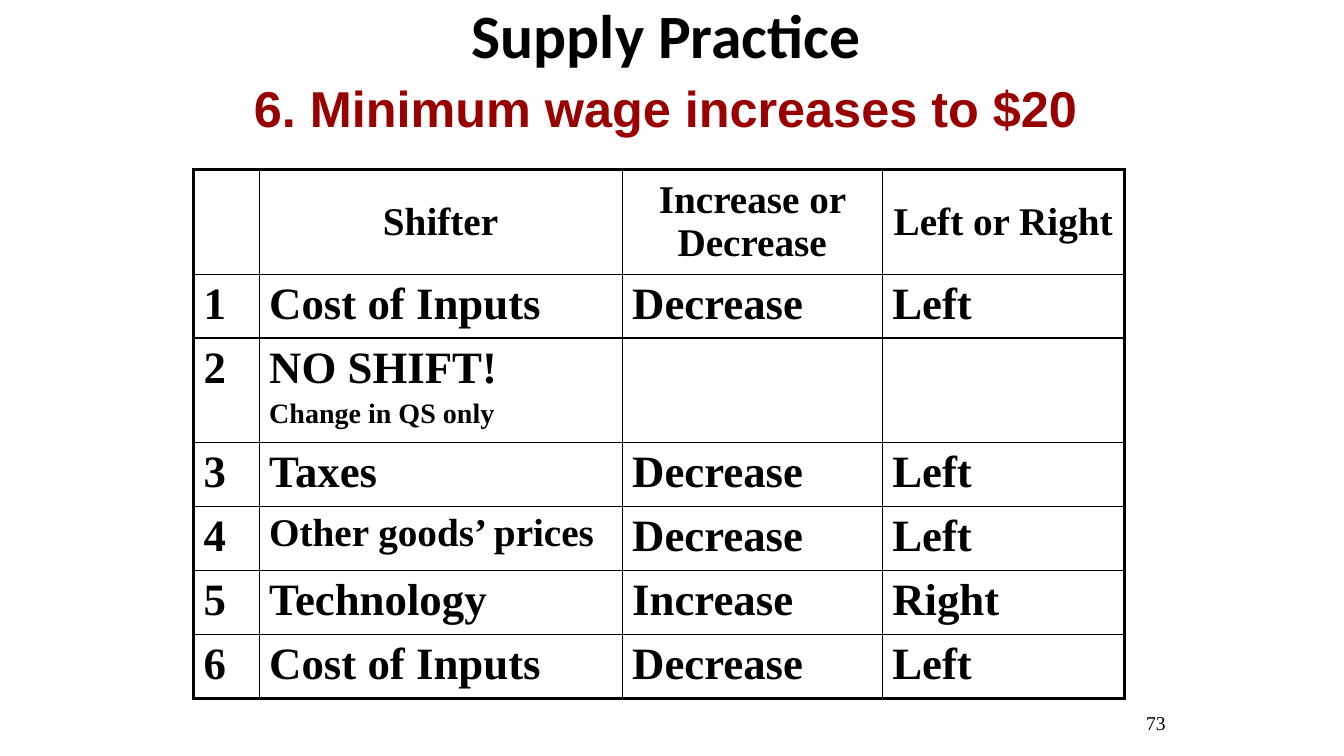
import pptx
import pptx.dml.color
import pptx.enum.text
import pptx.oxml
import pptx.oxml.ns
import pptx.util

Inches = pptx.util.Inches
Pt = pptx.util.Pt
ALIGN = pptx.enum.text.PP_ALIGN
ANCHOR = pptx.enum.text.MSO_ANCHOR
AUTO_SIZE = pptx.enum.text.MSO_AUTO_SIZE

COLORS = {"ink": "000000", "question": "990000", "paper": "FFFFFF"}
SERIF = "Times New Roman"
HEADINGS = ["", "Shifter", "Increase or Decrease", "Left or Right"]
ANSWERS = [
    ["1", "Cost of Inputs", "Decrease", "Left"],
    ["2", "NO SHIFT!\nChange in QS only", "", ""],
    ["3", "Taxes", "Decrease", "Left"],
    ["4", "Other goods’ prices", "Decrease", "Left"],
    ["5", "Technology", "Increase", "Right"],
    ["6", "Cost of Inputs", "Decrease", "Left"],
]
TEXT_SIZES = {"Change in QS only": 20, "Other goods’ prices": 28}
COLUMN_WIDTHS = [0.65, 3.6, 2.58, 2.4]
ROW_HEIGHTS = [1.04, 0.63, 1.04, 0.63, 0.63, 0.63, 0.63]


class PracticeSlide:
    def __init__(self, presentation):
        self.slide = presentation.slides.add_slide(presentation.slide_layouts[5])
        background = self.slide.background.fill
        background.solid()
        background.fore_color.rgb = self.color("paper")

    def color(self, key):
        return pptx.dml.color.RGBColor.from_string(COLORS[key])

    def apply(self, target, values):
        for attribute, value in values.items():
            setattr(target, attribute, value)

    def add_words(self, paragraph, text, font, size, color="ink", bold=True, **layout):
        run = paragraph.add_run()
        run.text = text
        self.apply(run.font, {"name": font, "size": Pt(size), "bold": bold})
        run.font.color.rgb = self.color(color)
        self.apply(paragraph, layout)

    def title(self, text, left, top, width, height):
        heading = self.slide.shapes.title
        self.apply(heading, {
            "left": Inches(left), "top": Inches(top),
            "width": Inches(width), "height": Inches(height),
        })
        margins = ["margin_left", "margin_top", "margin_right", "margin_bottom"]
        self.apply(heading.text_frame, {
            **dict.fromkeys(margins, Inches(0.05)),
            "vertical_anchor": ANCHOR.MIDDLE,
            "word_wrap": True,
            "auto_size": AUTO_SIZE.NONE,
        })
        self.add_words(heading.text_frame.paragraphs[0], text, "Calibri", 44,
                       alignment=ALIGN.LEFT, line_spacing=0.9)

    def text(self, text, left, top, width, height, font, size, indent=0, **style):
        box = self.slide.shapes.add_textbox(
            Inches(left), Inches(top), Inches(width), Inches(height))
        box.text_frame.word_wrap = True
        paragraph = box.text_frame.paragraphs[0]
        if indent:
            properties = paragraph._p.get_or_add_pPr()
            properties.set("marL", "0")
            properties.set("indent", str(Inches(indent)))
        self.add_words(paragraph, text, font, size, **style)

    def border(self, cell, outer_sides):
        properties = cell._tc.get_or_add_tcPr()
        for side in "LRTB":
            width = Pt(2.25 if side in outer_sides else 1)
            properties.append(pptx.oxml.parse_xml(
                f'<a:ln{side} {pptx.oxml.ns.nsdecls("a")} w="{width}">'
                f'<a:solidFill><a:srgbClr val="{COLORS["ink"]}"/></a:solidFill>'
                f'</a:ln{side}>'))
        cell.fill.background()

    def cell(self, cell, text, is_heading):
        cell.vertical_anchor = ANCHOR.MIDDLE if is_heading else ANCHOR.TOP
        for number, line in enumerate(text.split("\n") if text else []):
            frame = cell.text_frame
            paragraph = frame.add_paragraph() if number else frame.paragraphs[0]
            size = 28 if is_heading else TEXT_SIZES.get(line, 32)
            self.add_words(paragraph, line, SERIF, size,
                           alignment=ALIGN.CENTER if is_heading else ALIGN.LEFT)
            if number:
                paragraph.space_before = Pt(size * 0.2)

    def table(self, rows, left, top):
        answers = self.slide.shapes.add_table(
            len(rows), len(COLUMN_WIDTHS), Inches(left), Inches(top),
            Inches(sum(COLUMN_WIDTHS)), Inches(sum(ROW_HEIGHTS))).table
        self.apply(answers, {"first_row": False, "horz_banding": False})
        for column, width in zip(answers.columns, COLUMN_WIDTHS):
            column.width = Inches(width)
        for row, height in zip(answers.rows, ROW_HEIGHTS):
            row.height = Inches(height)
        last_row, last_column = len(rows) - 1, len(COLUMN_WIDTHS) - 1
        for r, texts in enumerate(rows):
            for c, text in enumerate(texts):
                edges = {"L": c == 0, "R": c == last_column,
                         "T": r == 0, "B": r == last_row}
                cell = answers.cell(r, c)
                self.border(cell, [side for side in edges if edges[side]])
                self.cell(cell, text, r == 0)


def main():
    presentation = pptx.Presentation()
    presentation.slide_width = Inches(13.33)
    presentation.slide_height = Inches(7.5)
    practice = PracticeSlide(presentation)
    practice.title("Supply Practice", 4.63, -0.24, 8.5, 1.25)
    practice.text("6. Minimum wage increases to $20", 1.92, 0.83, 9.75, 0.59,
                  "Arial", 36, indent=0.5, color="question", line_spacing=0.8)
    practice.text("73", 9.58, 7, 2.08, 0.5, SERIF, 14, bold=False,
                  alignment=ALIGN.RIGHT)
    practice.table([HEADINGS] + ANSWERS, 1.92, 1.68)
    presentation.save("out.pptx")


if __name__ == "__main__":
    main()
